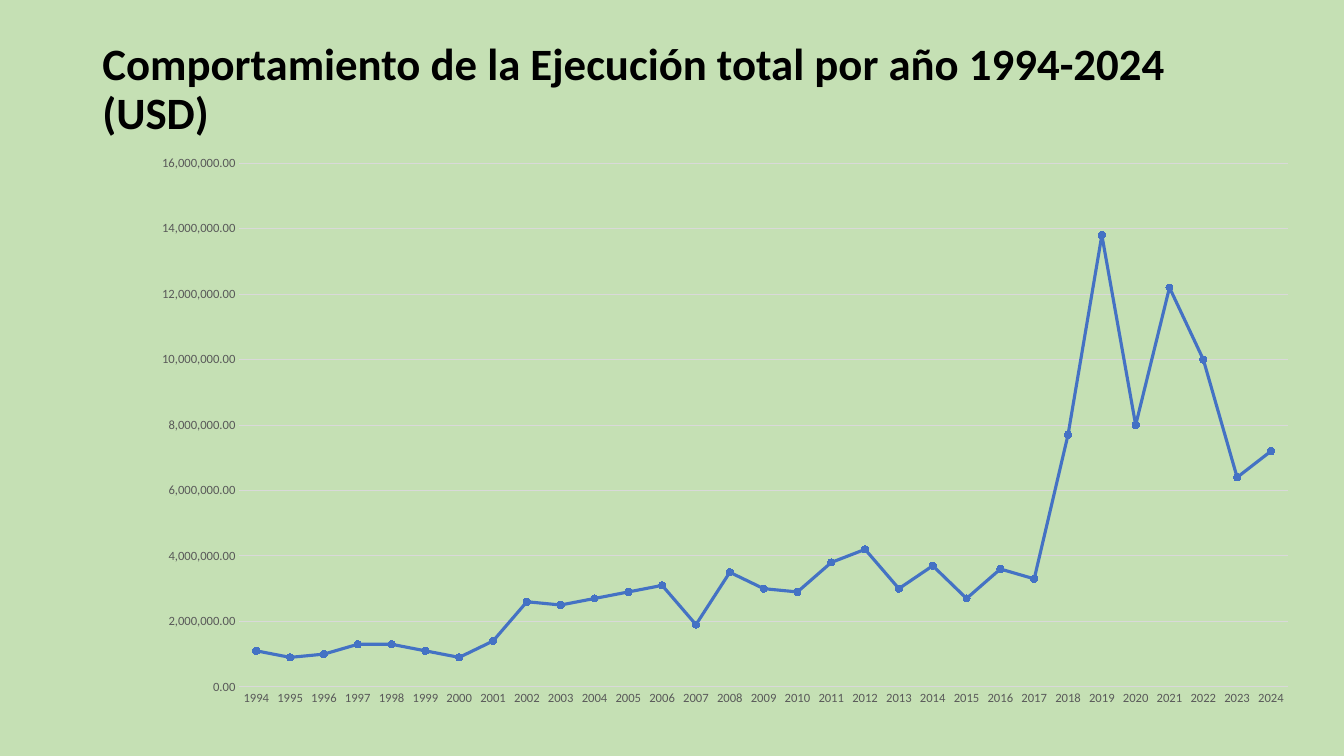
from lxml import etree
from pptx import Presentation
from pptx.chart.data import CategoryChartData
from pptx.dml.color import RGBColor
from pptx.enum.chart import XL_CHART_TYPE, XL_MARKER_STYLE, XL_TICK_MARK
from pptx.enum.text import MSO_ANCHOR
from pptx.oxml.ns import qn
from pptx.util import Cm, Pt

LINE_CHART = XL_CHART_TYPE.LINE_MARKERS_STACKED
CIRCLE = XL_MARKER_STYLE.CIRCLE
NO_TICK = XL_TICK_MARK.NONE
MIDDLE = MSO_ANCHOR.MIDDLE

GREEN = RGBColor(0xC5, 0xE0, 0xB4)
BLACK = RGBColor(0x00, 0x00, 0x00)
GREY = RGBColor(0x59, 0x59, 0x59)
LIGHT_GREY = RGBColor(0xD9, 0xD9, 0xD9)
BLUE = RGBColor(0x44, 0x72, 0xC4)
FONT = "Calibri"

TITLE = "Comportamiento de la Ejecución total por año 1994-2024 (USD)"
FIRST_YEAR = 1994
MILLIONS_BY_YEAR = [
    1.1, 0.9, 1.0, 1.3, 1.3, 1.1, 0.9, 1.4, 2.6, 2.5, 2.7,
    2.9, 3.1, 1.9, 3.5, 3.0, 2.9, 3.8, 4.2, 3.0, 3.7,
    2.7, 3.6, 3.3, 7.7, 13.8, 8.0, 12.2, 10.0, 6.4, 7.2,
]
PLOT_AREA = {"x": 0.147, "y": 0.057, "w": 0.853, "h": 0.852}


def format_font(font, color, **values):
    for name, value in {"name": FONT, **values}.items():
        setattr(font, name, value)
    font.color.rgb = color


def format_line(line, color, width):
    line.color.rgb = color
    line.width = Pt(width)


def add_title(slide):
    box = slide.shapes.add_textbox(Cm(2.33), Cm(1.01), Cm(29.21), Cm(2.54))
    frame = box.text_frame
    for name, value in {"word_wrap": True, "vertical_anchor": MIDDLE}.items():
        setattr(frame, name, value)
    paragraph = frame.paragraphs[0]
    paragraph.line_spacing = 0.9
    run = paragraph.add_run()
    run.text = TITLE
    format_font(run.font, BLACK, size=Pt(32), bold=True)


def format_axis(axis, values):
    for name, value in values.items():
        setattr(axis, name, value)
    axis.major_tick_mark = NO_TICK
    axis.minor_tick_mark = NO_TICK
    format_font(axis.tick_labels.font, GREY, size=Pt(9))


def place_plot_area(chart):
    """Fix the inner plot area as fractions of the chart frame."""
    plot_area = chart.element.find(".//" + qn("c:plotArea"))
    layout = plot_area.find(qn("c:layout"))
    if layout is None:
        layout = etree.Element(qn("c:layout"))
        plot_area.insert(0, layout)
    manual = etree.SubElement(layout, qn("c:manualLayout"))
    settings = {"layoutTarget": "inner", "xMode": "edge", "yMode": "edge", **PLOT_AREA}
    for name, value in settings.items():
        etree.SubElement(manual, qn("c:" + name)).set("val", str(value))


def add_yearly_chart(slide):
    data = CategoryChartData(number_format="#,##0.00")
    data.categories = [str(FIRST_YEAR + i) for i in range(len(MILLIONS_BY_YEAR))]
    data.add_series("Series 1", [round(value * 1_000_000) for value in MILLIONS_BY_YEAR])
    frame = slide.shapes.add_chart(
        LINE_CHART, Cm(1.48), Cm(3.23), Cm(30.99), Cm(15.49), data)
    chart = frame.chart
    chart.has_title = False
    chart.has_legend = False
    format_font(chart.font, BLACK, size=Pt(10))
    place_plot_area(chart)

    # Axes and gridlines
    format_axis(chart.category_axis, {"has_major_gridlines": False})
    format_line(chart.category_axis.format.line, LIGHT_GREY, 0.75)
    value_axis = chart.value_axis
    format_axis(value_axis, {"has_major_gridlines": True, "minimum_scale": 0,
                             "maximum_scale": 16_000_000, "major_unit": 2_000_000})
    value_axis.tick_labels.number_format = "#,##0.00"
    value_axis.tick_labels.number_format_is_linked = False
    value_axis.format.line.fill.background()
    format_line(value_axis.major_gridlines.format.line, LIGHT_GREY, 0.75)

    # Line and markers
    chart.plots[0].vary_by_categories = False
    series = chart.plots[0].series[0]
    series.smooth = False
    format_line(series.format.line, BLUE, 2.25)
    marker = series.marker
    marker.style = CIRCLE
    marker.size = 5
    marker.format.fill.solid()
    marker.format.fill.fore_color.rgb = BLUE
    format_line(marker.format.line, BLUE, 0.75)


def main():
    presentation = Presentation()
    presentation.slide_width = Cm(33.87)
    presentation.slide_height = Cm(19.05)
    slide = presentation.slides.add_slide(presentation.slide_layouts[6])
    slide.background.fill.solid()
    slide.background.fill.fore_color.rgb = GREEN
    add_yearly_chart(slide)
    add_title(slide)
    presentation.save("out.pptx")


if __name__ == "__main__":
    main()
